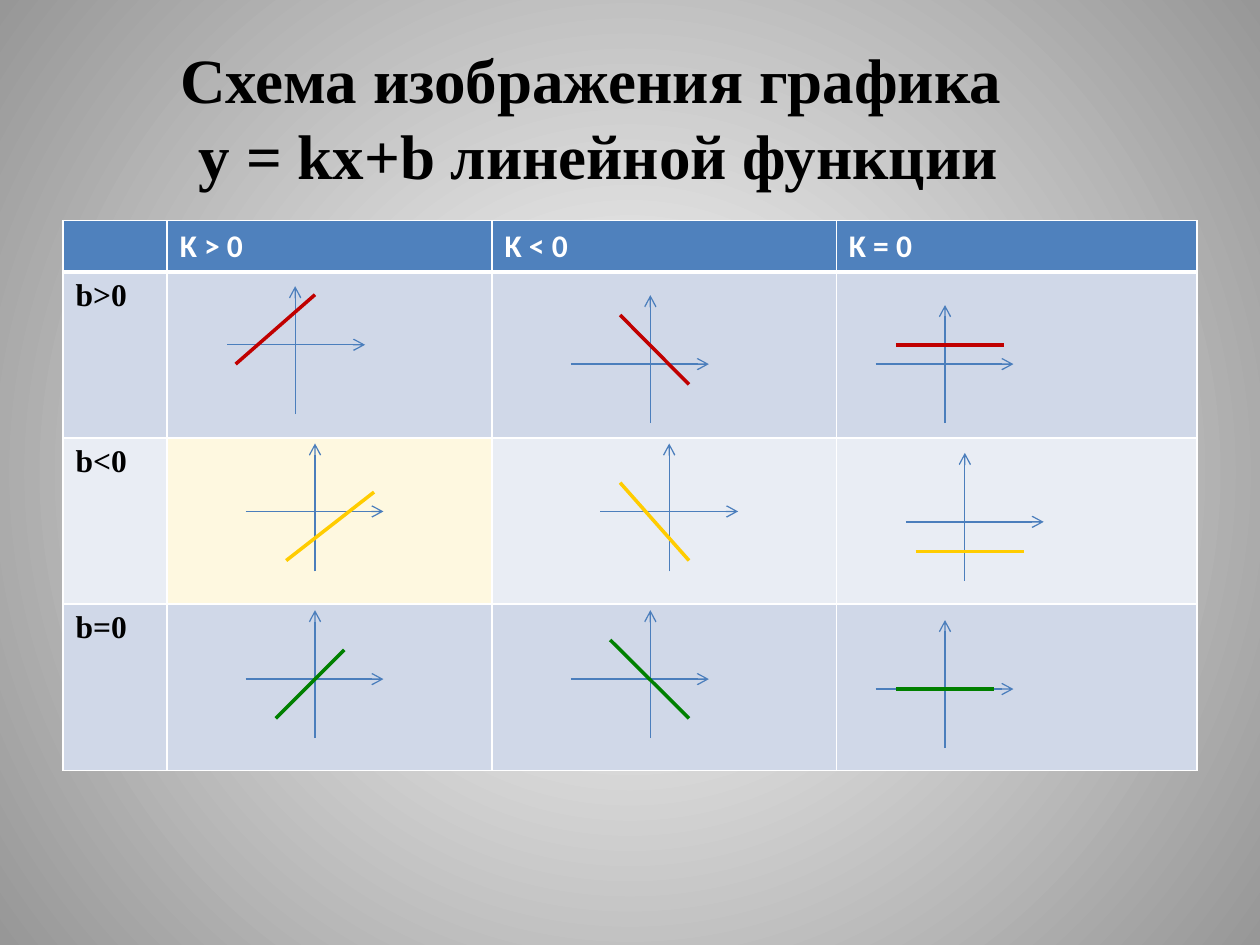
import lxml.etree
import pptx
import pptx.dml.color
import pptx.enum.shapes
import pptx.enum.text
import pptx.oxml
import pptx.oxml.ns
import pptx.util

Cm = pptx.util.Cm
Pt = pptx.util.Pt
qn = pptx.oxml.ns.qn


def color(hex_code):
    return pptx.dml.color.RGBColor.from_string(hex_code)


class SchemeSlide:
    serif = "Times New Roman"
    sans = "Calibri"
    ink = "000000"
    white = "FFFFFF"
    header_fill = "4F81BD"
    axis_color = "4B7EBC"
    axis_width = 2.78

    def __init__(self, deck):
        self.slide = deck.slides.add_slide(deck.slide_layouts[5])

    def background(self, center, edge):
        fill = self.slide.background.fill
        fill.gradient()
        for stop, hex_code in zip(fill.gradient_stops, (center, edge)):
            stop.color.rgb = color(hex_code)
        gradient = self.slide.element.find(".//" + qn("a:gradFill"))
        radial = pptx.oxml.parse_xml(
            f'<a:path {pptx.oxml.ns.nsdecls("a")} path="circle">'
            '<a:fillToRect l="50000" t="50000" r="50000" b="50000"/></a:path>')
        gradient.replace(gradient.find(qn("a:lin")), radial)

    def style_text(self, frame, size, font, hex_code):
        for paragraph in frame.paragraphs:
            for run in paragraph.runs:
                run.font.size = Pt(size)
                run.font.name = font
                run.font.bold = True
                run.font.color.rgb = color(hex_code)

    def title(self, text, left, top, width, height):
        heading = self.slide.shapes.title
        heading.left, heading.top = Cm(left), Cm(top)
        heading.width, heading.height = Cm(width), Cm(height)
        frame = heading.text_frame
        frame.text = text
        frame.vertical_anchor = pptx.enum.text.MSO_ANCHOR.MIDDLE
        frame.paragraphs[0].alignment = pptx.enum.text.PP_ALIGN.CENTER
        self.style_text(frame, 36, self.serif, self.ink)

    def cell_borders(self, cell, top, bottom):
        properties = cell._tc.get_or_add_tcPr()
        widths = {"lnL": 1, "lnR": 1, "lnT": top, "lnB": bottom}
        for position, (side, width) in enumerate(widths.items()):
            properties.insert(position, pptx.oxml.parse_xml(
                f'<a:{side} {pptx.oxml.ns.nsdecls("a")} w="{Pt(width)}"><a:solidFill>'
                f'<a:srgbClr val="{self.white}"/></a:solidFill></a:{side}>'))

    def table(self, rows, fills, left, top, widths, heights):
        grid = self.slide.shapes.add_table(
            len(rows), len(widths), Cm(left), Cm(top),
            Cm(sum(widths)), Cm(sum(heights))).table
        for column, width in zip(grid.columns, widths):
            column.width = Cm(width)
        for r, (texts, row_fills) in enumerate(zip(rows, fills)):
            grid.rows[r].height = Cm(heights[r])
            for c, (text, hex_code) in enumerate(zip(texts, row_fills)):
                cell = grid.cell(r, c)
                cell.text = text
                cell.fill.solid()
                cell.fill.fore_color.rgb = color(hex_code)
                self.cell_borders(cell, 3 if r == 1 else 1, 3 if r == 0 else 1)
                font, ink = (self.serif, self.ink) if r else (self.sans, self.white)
                self.style_text(cell.text_frame, 18, font, ink)

    def line(self, start, end, hex_code, width, arrow=False):
        stroke = self.slide.shapes.add_connector(
            pptx.enum.shapes.MSO_CONNECTOR.STRAIGHT,
            *(Cm(value) for value in (*start, *end)))
        stroke.line.color.rgb = color(hex_code)
        stroke.line.width = Pt(width)
        if arrow:
            lxml.etree.SubElement(stroke.line._get_or_add_ln(), qn("a:tailEnd"), type="arrow")
        lxml.etree.SubElement(stroke._element.spPr, qn("a:effectLst"))

    def axes(self, left, origin_x, origin_y, top, height):
        self.line((left, origin_y), (left + self.axis_width, origin_y),
                  self.axis_color, 0.75, arrow=True)
        self.line((origin_x, top + height), (origin_x, top),
                  self.axis_color, 0.75, arrow=True)


def main():
    deck = pptx.Presentation()
    deck.slide_width, deck.slide_height = Cm(25.4), Cm(19.05)
    scheme = SchemeSlide(deck)
    scheme.background("FFFFFF", "979797")
    scheme.title("Схема изображения графика \vу = kх+b линейной функции",
                 0, 0.76, 24.13, 3.18)

    rows = [["", "K > 0", "K < 0", "K = 0"]]
    rows += [[label, "", "", ""] for label in ("b>0", "b<0", "b=0")]
    dark, light, highlight = "D0D8E8", "E9EDF4", "FEF8E0"
    fills = [[scheme.header_fill] * 4, [dark] * 4,
             [light, highlight, light, light], [dark] * 4]
    scheme.table(rows, fills, 1.27, 4.45, [2.1, 6.55, 6.94, 7.27], [1.03] + [3.35] * 3)

    positive, negative, zero = "C00000", "FFCC00", "008000"
    graphs = [
        (positive, (4.58, 5.95, 6.95, 5.77, 2.58), (4.75, 7.34), (6.35, 5.94)),
        (positive, (11.51, 13.11, 7.34, 5.95, 2.58), (13.89, 7.75), (12.5, 6.35)),
        (positive, (17.65, 19.05, 7.34, 6.15, 2.38), (18.06, 6.95), (20.24, 6.95)),
        (negative, (4.95, 6.35, 10.31, 8.94, 2.58), (5.77, 11.3), (7.54, 9.92)),
        (negative, (12.1, 13.49, 10.31, 8.94, 2.58), (13.89, 11.3), (12.5, 9.73)),
        (negative, (18.26, 19.45, 10.52, 9.13, 2.58), (18.46, 11.12), (20.64, 11.12)),
        (zero, (4.95, 6.35, 13.69, 12.3, 2.58), (5.56, 14.48), (6.94, 13.1)),
        (zero, (11.51, 13.11, 13.69, 12.3, 2.58), (13.89, 14.48), (12.3, 12.9)),
        (zero, (17.65, 19.05, 13.89, 12.5, 2.58), (18.06, 13.89), (20.04, 13.89)),
    ]
    for _, axes, _, _ in graphs:
        scheme.axes(*axes)
    for hex_code, _, start, end in graphs:
        scheme.line(start, end, hex_code, 2)

    deck.save("out.pptx")


if __name__ == "__main__":
    main()
